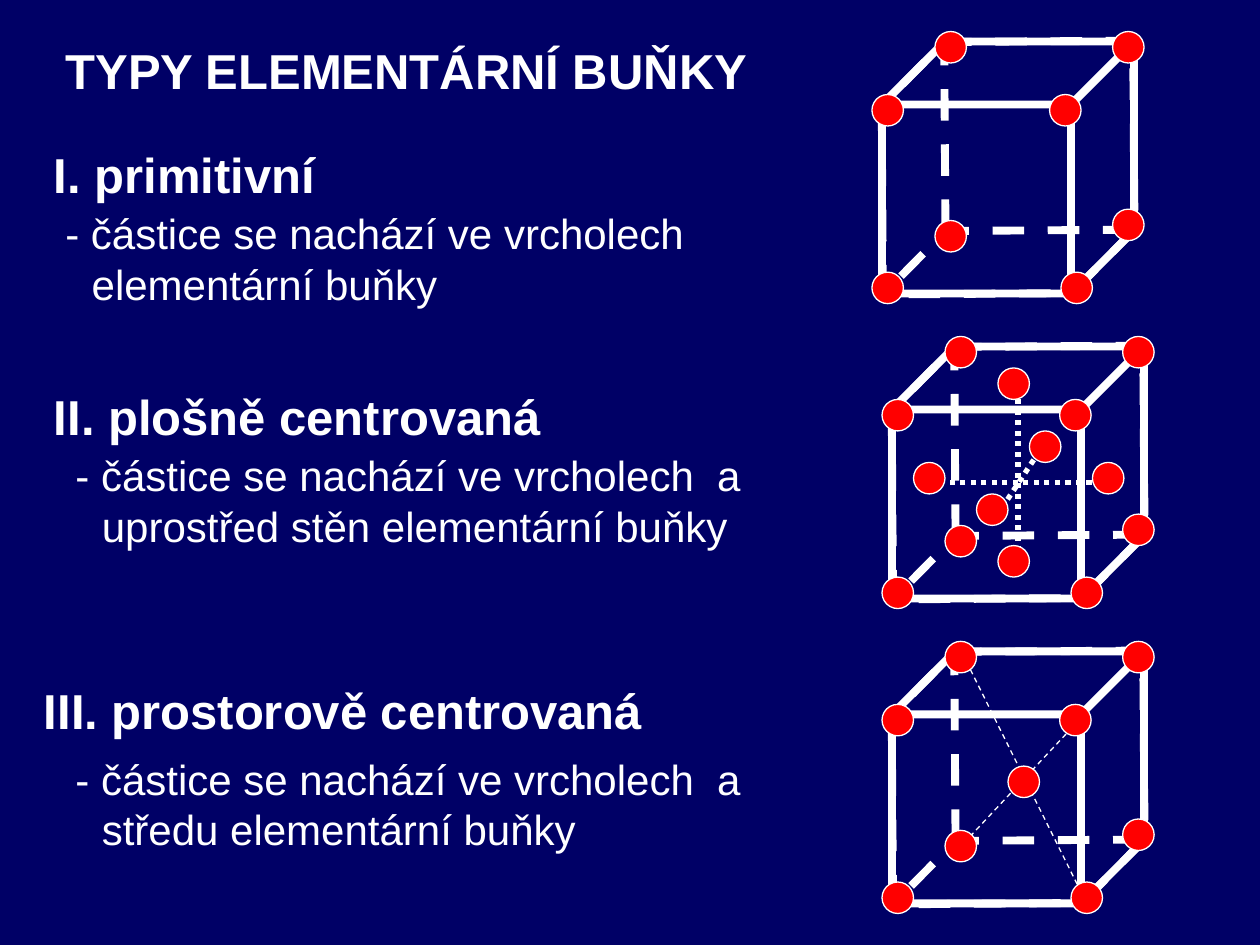
import dataclasses
import typing

import pptx
import pptx.dml.color
import pptx.enum.dml
import pptx.enum.shapes
import pptx.enum.text
import pptx.oxml
import pptx.oxml.ns
import pptx.util

Inches = pptx.util.Inches
Dash = pptx.enum.dml.MSO_LINE
Preset = pptx.enum.shapes.MSO_SHAPE
Point = tuple[float, float]

COLOURS = {"background": "000066", "line": "FFFFFF", "text": "FFFFFF", "particle": "FF0000"}
PARTICLE_SIZE = 0.25
CUBE_SIZE = 2
CORNERS = [
    (-0.08, 1.83), (1.83, -0.08), (1.83, 1.33), (1.42, 1.83),
    (-0.08, 0.42), (1.33, 0.42), (0.42, -0.08), (0.42, 1.42),
]
HEADING_FORMAT = {"name": "Arial", "size": pptx.util.Pt(28), "bold": True}
BODY_FORMAT = {"name": "Arial", "size": pptx.util.Pt(24), "bold": False}
FRAME_FORMAT = {
    "word_wrap": True,
    "auto_size": pptx.enum.text.MSO_AUTO_SIZE.SHAPE_TO_FIT_TEXT,
    "vertical_anchor": pptx.enum.text.MSO_ANCHOR.TOP,
    "margin_left": Inches(0.1),
    "margin_right": Inches(0.1),
    "margin_top": Inches(0.05),
    "margin_bottom": Inches(0.05),
}


@dataclasses.dataclass
class Label:
    text: str
    left: float
    top: float
    width: float
    heading: bool = True


@dataclasses.dataclass
class Cell:
    left: float
    top: float
    particles: list[Point] = dataclasses.field(default_factory=list)
    axes: list[tuple[Point, Point]] = dataclasses.field(default_factory=list)
    axis_width: float = 0.75
    axis_dash: typing.Any = Dash.DASH
    axes_behind: bool = False


TITLE = Label("TYPY ELEMENTÁRNÍ BUŇKY", 0.42, 0.27, 6.17)
LABELS = [
    Label("I. primitivní", 0.33, 1.1, 2.33),
    Label("- částice se nachází ve vrcholech elementární buňky", 0.42, 1.6, 6.83, False),
    Label("II. plošně centrovaná", 0.33, 3.02, 5.75),
    Label("- částice se nachází ve vrcholech  a uprostřed stěn elementární buňky",
          0.5, 3.52, 6.58, False),
    Label("III. prostorově centrovaná", 0.25, 5.35, 5.75),
    Label("- částice se nachází ve vrcholech  a středu elementární buňky",
          0.5, 5.93, 6.42, False),
]
CELLS = [
    Cell(7, 0.33),
    Cell(
        7.08, 2.75,
        particles=[(0.17, 0.92), (1.59, 0.92), (0.84, 0.17),
                   (0.84, 1.58), (0.67, 1.17), (1.09, 0.67)],
        axes=[((1, 0.25), (1, 1.83)), ((1.75, 1.08), (0.25, 1.08)),
              ((1.17, 0.83), (0.84, 1.33))],
        axis_width=3,
        axis_dash=Dash.ROUND_DOT,
    ),
    Cell(
        7.08, 5.17,
        particles=[(0.92, 0.91)],
        axes=[((0.59, 0.08), (1.5, 1.91)), ((1.92, 0.08), (0.59, 1.5))],
        axes_behind=True,
    ),
]


def colour(name: str) -> pptx.dml.color.RGBColor:
    return pptx.dml.color.RGBColor.from_string(COLOURS[name])


def apply_format(target: typing.Any, values: dict[str, typing.Any]) -> None:
    for name, value in values.items():
        setattr(target, name, value)


def style_line(shape: typing.Any, width: float, dash: typing.Any = None) -> None:
    shape.line.color.rgb = colour("line")
    apply_format(shape.line, {"width": pptx.util.Pt(width), "dash_style": dash})


def write_label(shape: typing.Any, label: Label) -> None:
    apply_format(shape, {
        "left": Inches(label.left),
        "top": Inches(label.top),
        "width": Inches(label.width),
        "height": Inches(0.57 if label.heading else 0.9),
    })
    apply_format(shape.text_frame, FRAME_FORMAT)
    paragraph = shape.text_frame.paragraphs[0]
    paragraph.alignment = pptx.enum.text.PP_ALIGN.LEFT
    run = paragraph.add_run()
    run.text = label.text
    apply_format(run.font, HEADING_FORMAT if label.heading else BODY_FORMAT)
    run.font.color.rgb = colour("text")
    if not label.heading:
        properties = paragraph._p.get_or_add_pPr()
        properties.set("marL", str(Inches(0.21)))
        properties.set("indent", str(-Inches(0.21)))


def draw_cube(group: typing.Any, cell: Cell, rotation: float, dash: typing.Any) -> None:
    cube = group.shapes.add_shape(
        Preset.CUBE, Inches(cell.left), Inches(cell.top), Inches(CUBE_SIZE), Inches(CUBE_SIZE))
    cube.adjustments[0] = 0.25
    cube.rotation = rotation
    cube.shadow.inherit = False
    cube.fill.background()
    style_line(cube, 4.5, dash)


def draw_particles(group: typing.Any, cell: Cell, offsets: list[Point]) -> None:
    for x, y in offsets:
        particle = group.shapes.add_shape(
            Preset.OVAL, Inches(cell.left + x), Inches(cell.top + y),
            Inches(PARTICLE_SIZE), Inches(PARTICLE_SIZE))
        particle.shadow.inherit = False
        particle.fill.solid()
        particle.fill.fore_color.rgb = colour("particle")
        style_line(particle, 0.75)


def draw_centring(group: typing.Any, cell: Cell) -> None:
    for (start_x, start_y), (end_x, end_y) in cell.axes:
        axis = group.shapes.add_connector(
            pptx.enum.shapes.MSO_CONNECTOR.STRAIGHT,
            Inches(cell.left + start_x), Inches(cell.top + start_y),
            Inches(cell.left + end_x), Inches(cell.top + end_y))
        style_line(axis, cell.axis_width, cell.axis_dash)
        axis._element.spPr.append(
            pptx.oxml.parse_xml(f"<a:effectLst {pptx.oxml.ns.nsdecls('a')}/>"))
    draw_particles(group, cell, cell.particles)


def draw_cell(slide: typing.Any, cell: Cell) -> None:
    group = slide.shapes.add_group_shape()
    if cell.axes_behind:
        draw_centring(group, cell)
    draw_cube(group, cell, 0, None)
    draw_cube(group, cell, 179.6, Dash.DASH)
    draw_particles(group, cell, CORNERS)
    if not cell.axes_behind:
        draw_centring(group, cell)


def main() -> None:
    presentation = pptx.Presentation()
    presentation.slide_width = Inches(10)
    presentation.slide_height = Inches(7.5)
    slide = presentation.slides.add_slide(presentation.slide_layouts.get_by_name("Title Only"))
    slide.background.fill.solid()
    slide.background.fill.fore_color.rgb = colour("background")
    write_label(slide.shapes.title, TITLE)
    for label in LABELS:
        write_label(slide.shapes.add_textbox(0, 0, 0, 0), label)
    for cell in CELLS:
        draw_cell(slide, cell)
    presentation.save("out.pptx")


if __name__ == "__main__":
    main()
